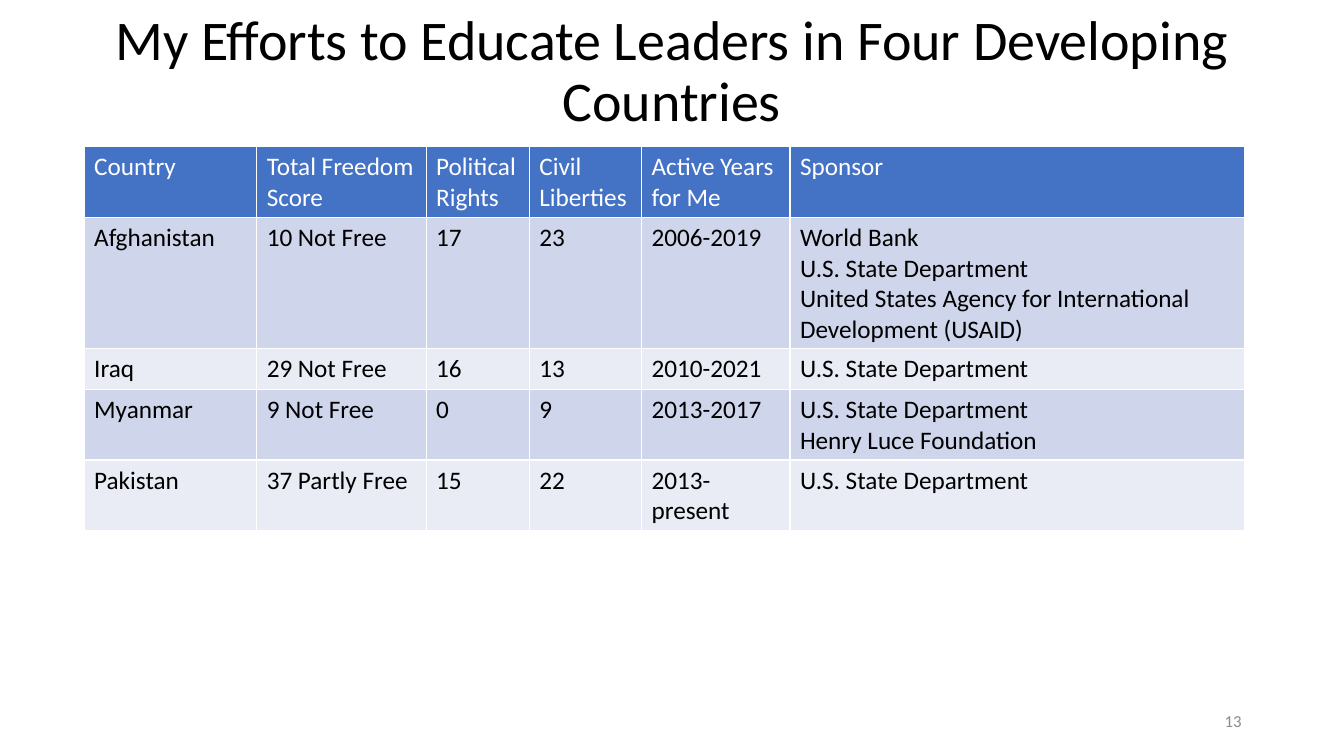
from pptx import Presentation
from pptx.dml.color import RGBColor
from pptx.enum.text import MSO_ANCHOR, PP_ALIGN
from pptx.util import Cm, Pt

MIDDLE = MSO_ANCHOR.MIDDLE
CENTER, RIGHT = PP_ALIGN.CENTER, PP_ALIGN.RIGHT

COLORS = {
    "black": "000000",
    "white": "FFFFFF",
    "grey": "8C8C8C",
    "header": "4472C4",
    "odd_row": "CFD5EA",
    "even_row": "E9EBF5",
}

COLUMN_WIDTHS = [4.35, 4.27, 2.6, 2.83, 3.74, 11.46]
ROW_HEIGHT = 1.03
ROWS = [
    ["Country", "Total Freedom Score", "Political Rights",
     "Civil Liberties", "Active Years for Me", "Sponsor"],
    ["Afghanistan", "10 Not Free", "17", "23", "2006-2019",
     "World Bank\nU.S. State Department\n"
     "United States Agency for International Development (USAID)"],
    ["Iraq", "29 Not Free", "16", "13", "2010-2021", "U.S. State Department"],
    ["Myanmar", "9 Not Free", "0", "9", "2013-2017",
     "U.S. State Department\nHenry Luce Foundation"],
    ["Pakistan", "37 Partly Free", "15", "22", "2013-present",
     "U.S. State Department"],
]


class SlideBuilder:
    def __init__(self, slide, font="Calibri"):
        self.slide = slide
        self.font = font

    def color(self, name):
        return RGBColor.from_string(COLORS[name])

    def style(self, text_frame, size, color):
        for paragraph in text_frame.paragraphs:
            for run in paragraph.runs:
                run.font.name = self.font
                run.font.size = Pt(size)
                run.font.bold = False
                run.font.color.rgb = self.color(color)

    def text(self, content, left, top, width, height, size, color, alignment,
             line_spacing=1.0):
        shape = self.slide.shapes.add_textbox(
            Cm(left), Cm(top), Cm(width), Cm(height))
        text_frame = shape.text_frame
        text_frame.word_wrap = True
        text_frame.vertical_anchor = MIDDLE
        text_frame.text = content
        paragraph = text_frame.paragraphs[0]
        paragraph.alignment = alignment
        paragraph.line_spacing = line_spacing
        self.style(text_frame, size, color)

    def table(self, rows, left, top, column_widths, row_height, size):
        table = self.slide.shapes.add_table(
            len(rows), len(column_widths), Cm(left), Cm(top),
            Cm(sum(column_widths)), Cm(row_height * len(rows))).table
        for column, width in zip(table.columns, column_widths):
            column.width = Cm(width)
        for row_index, values in enumerate(rows):
            if row_index == 0:
                fill, color = "header", "white"
            else:
                fill = "odd_row" if row_index % 2 else "even_row"
                color = "black"
            for column_index, value in enumerate(values):
                cell = table.cell(row_index, column_index)
                cell.fill.solid()
                cell.fill.fore_color.rgb = self.color(fill)
                cell.text_frame.text = value
                self.style(cell.text_frame, size, color)


def main():
    presentation = Presentation()
    presentation.slide_width = Cm(33.87)
    presentation.slide_height = Cm(19.05)
    slide = presentation.slides.add_slide(presentation.slide_layouts[6])
    builder = SlideBuilder(slide)
    builder.text("My Efforts to Educate Leaders in Four Developing Countries",
                 0.43, 0, 33, 3.68, 40, "black", CENTER, line_spacing=0.9)
    builder.table(ROWS, 2.12, 3.7, COLUMN_WIDTHS, ROW_HEIGHT, 18)
    builder.text("13", 23.92, 17.66, 7.62, 1.01, 12, "grey", RIGHT)
    presentation.save("out.pptx")


if __name__ == "__main__":
    main()
